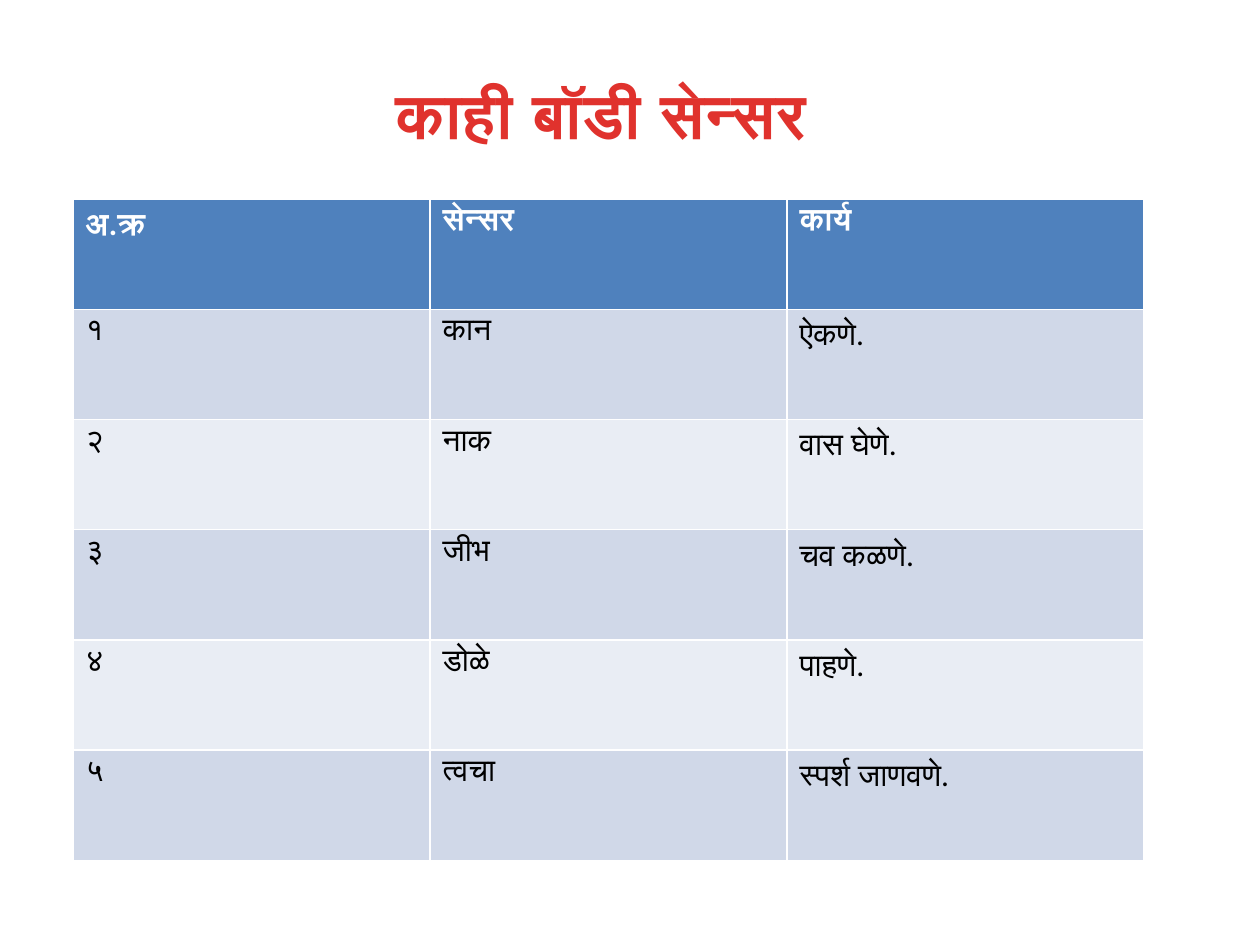
import pptx
import pptx.util
import pptx.dml.color
import pptx.enum.text

RED = pptx.dml.color.RGBColor(0xE0, 0x32, 0x2D)
BLUE = pptx.dml.color.RGBColor(0x4F, 0x81, 0xBD)
BAND = pptx.dml.color.RGBColor(0xD0, 0xD8, 0xE8)
PALE = pptx.dml.color.RGBColor(0xE9, 0xED, 0xF4)
WHITE = pptx.dml.color.RGBColor(0xFF, 0xFF, 0xFF)
BLACK = pptx.dml.color.RGBColor(0, 0, 0)

Inches = pptx.util.Inches
WIDE, HIGH = Inches(10), Inches(7.5)

ROWS = [
    ("अ.क्र", "सेन्सर", "कार्य"),
    ("१", "कान", "ऐकणे."),
    ("२", "नाक", "वास घेणे."),
    ("३", "जीभ", "चव कळणे."),
    ("४", "डोळे", "पाहणे."),
    ("५", "त्वचा", "स्पर्श जाणवणे."),
]


def style(run, font, size, color, bold):
    run.font.name = font
    run.font.size = pptx.util.Pt(size)
    run.font.color.rgb = color
    run.font.bold = bold


def set_title(slide, text):
    title = slide.shapes.title
    title.left, title.top = int(WIDE * 0.05), int(HIGH * 0.04)
    title.width, title.height = int(WIDE * 0.9), int(HIGH * 0.16)
    frame = title.text_frame
    frame.text = text
    frame.vertical_anchor = pptx.enum.text.MSO_ANCHOR.MIDDLE
    frame.margin_right = Inches(0.56)  # moves the centred line left
    line = frame.paragraphs[0]
    line.alignment = pptx.enum.text.PP_ALIGN.CENTER
    run = line.runs[0]
    style(run, "Montserrat", 36, RED, True)
    run.font._element.set("spc", "50")  # letter spacing, 1/100 pt


def fill_cell(cell, text, row):
    head = row == 0
    cell.fill.solid()
    cell.fill.fore_color.rgb = BLUE if head else BAND if row % 2 else PALE
    cell.text_frame.text = text
    run = cell.text_frame.paragraphs[0].runs[0]
    style(run, "Calibri", 18, WHITE if head else BLACK, head)


def add_grid(slide, rows):
    """The default table style draws the white rules."""
    grid = slide.shapes.add_table(
        len(rows), len(rows[0]),
        Inches(0.58), Inches(1.58), Inches(8.5), Inches(5.25)).table
    for r, row in enumerate(rows):
        for c, text in enumerate(row):
            fill_cell(grid.cell(r, c), text, r)


def main():
    deck = pptx.Presentation()
    deck.slide_width, deck.slide_height = WIDE, HIGH
    slide = deck.slides.add_slide(deck.slide_layouts[5])
    set_title(slide, "काही बॉडी सेन्सर")
    add_grid(slide, ROWS)
    deck.save("out.pptx")


if __name__ == "__main__":
    main()
